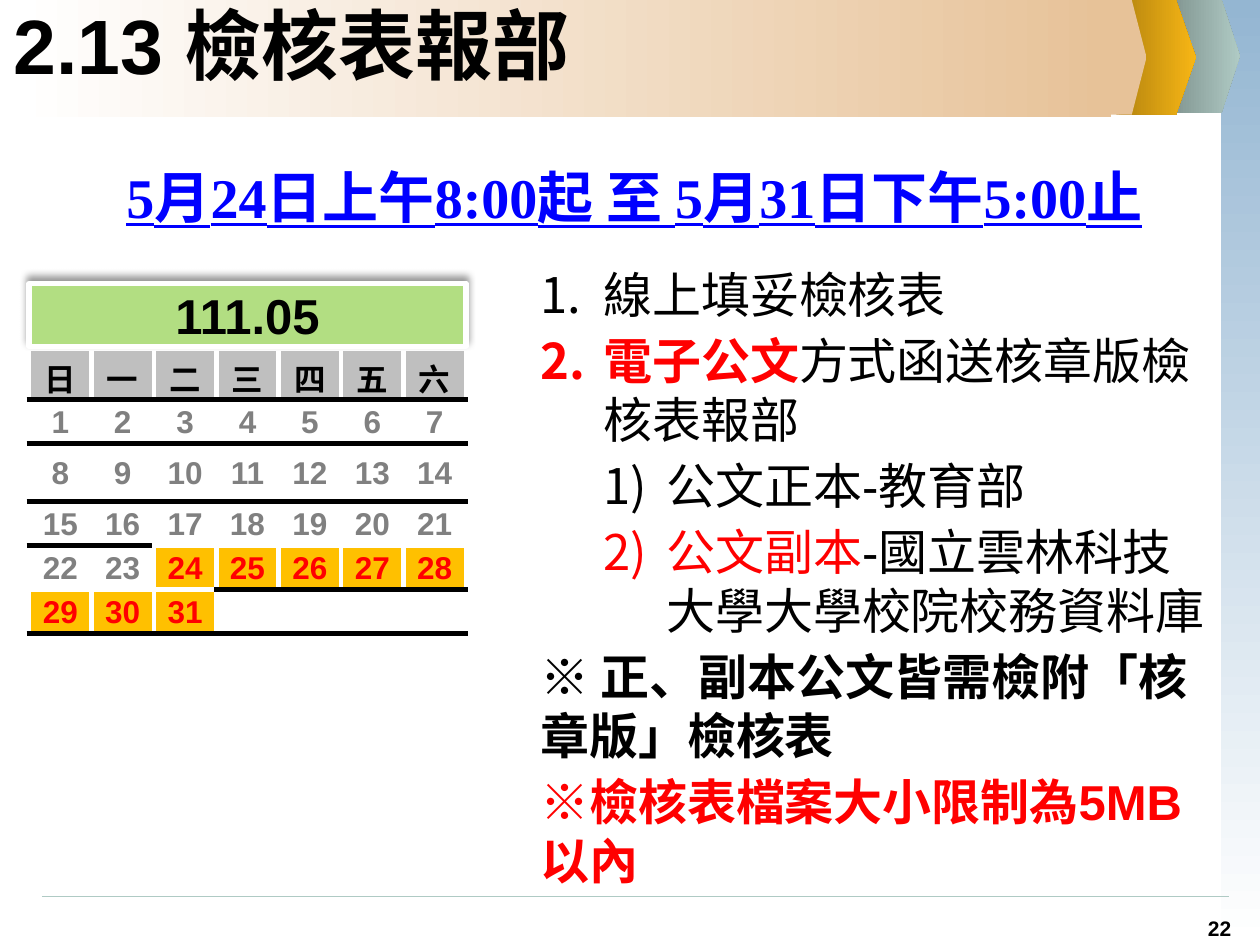
from dataclasses import dataclass
from typing import NamedTuple, Optional

from lxml import etree
from pptx import Presentation
from pptx.dml.color import RGBColor
from pptx.enum.shapes import MSO_CONNECTOR, MSO_SHAPE
from pptx.enum.text import MSO_ANCHOR, PP_ALIGN
from pptx.oxml.ns import qn
from pptx.util import Pt

RECT, PLATE = MSO_SHAPE.RECTANGLE, MSO_SHAPE.PENTAGON
STRAIGHT = MSO_CONNECTOR.STRAIGHT
LEFT, CENTER = PP_ALIGN.LEFT, PP_ALIGN.CENTER
TOP, MIDDLE = MSO_ANCHOR.TOP, MSO_ANCHOR.MIDDLE


@dataclass(frozen=True)
class Theme:
    black: str = "000000"
    white: str = "FFFFFF"
    red: str = "FF0000"
    link_blue: str = "0000FF"
    side_blue: str = "94B6D2"
    tan: str = "E7C298"
    sage: str = "AFCAC4"
    dark_sage: str = "7D908C"
    gold: str = "F7B615"
    dark_gold: str = "B1820F"
    month_green: str = "B2DE82"
    header_gray: str = "BFBFBF"
    day_gray: str = "808080"
    open_day: str = "FFC000"
    sans: str = "Arial"
    serif: str = "Times New Roman"
    cjk: str = "Noto Sans CJK SC"
    title_size: float = 44
    date_size: float = 32
    body_size: float = 28
    calendar_size: float = 18
    page_size: float = 12


THEME = Theme()


class Area(NamedTuple):
    left: float
    top: float
    width: float
    height: float

    def lengths(self):
        return [Pt(value) for value in self]


class Piece(NamedTuple):
    text: str
    color: str = THEME.black
    bold: bool = False


class Item(NamedTuple):
    pieces: list
    numbering: Optional[str] = None
    level: int = 0


class Band(NamedTuple):
    shape: MSO_SHAPE
    area: Area
    start: str
    end: str
    angle: float = 0


BANDS = [
    Band(PLATE, Area(666, -0.72, 42.5, 65.5), THEME.dark_sage, THEME.sage),
    Band(PLATE, Area(638, 0, 45.4, 65.5), THEME.dark_gold, THEME.gold),
    Band(RECT, Area(8.64, 0, 626.4, 67), THEME.white, THEME.tan),
    Band(PLATE, Area(621.4, 0, 33.8, 65.5), THEME.tan, THEME.tan),
]
SIDE_BAND = Band(RECT, Area(697.7, 0, 22.3, 540), THEME.side_blue, THEME.white, 270)

ITEMS = [
    Item([Piece("線上填妥檢核表")], "arabicPeriod"),
    Item([Piece("電子公文", THEME.red, True), Piece("方式函送核章版檢核表報部")], "arabicPeriod"),
    Item([Piece("公文正本-教育部")], "arabicParenR", 1),
    Item([Piece("公文副本", THEME.red), Piece("-國立雲林科技大學大學校院校務資料庫")],
         "arabicParenR", 1),
    Item([Piece("※ 正、副本公文皆需檢附「核章版」檢核表", bold=True)]),
    Item([Piece("※檢核表檔案大小限制為5MB以內", THEME.red, True)]),
]

WEEKDAYS = "日一二三四五六"
ROW_HEIGHTS = [24, 25.2, 33.1, 25.2, 25.2, 25.2]
LAST_DAY = 31
OPEN_DAYS = range(24, LAST_DAY + 1)


def add_run(para, piece: Piece, size: float, latin: str = THEME.sans):
    run = para.add_run()
    run.text = piece.text
    font = run.font
    font.name, font.size, font.bold = latin, Pt(size), piece.bold
    font.color.rgb = RGBColor.from_string(piece.color)
    east_asian = etree.Element(qn("a:ea"), typeface=THEME.cjk)
    font._element.find(qn("a:latin")).addnext(east_asian)
    return run


def add_text_box(slide, area: Area, anchor=TOP):
    frame = slide.shapes.add_textbox(*area.lengths()).text_frame
    frame.word_wrap = True
    frame.vertical_anchor = anchor
    return frame


def add_band(slide, band: Band) -> None:
    shape = slide.shapes.add_shape(band.shape, *band.area.lengths())
    shape.shadow.inherit = False
    shape.line.fill.background()
    if band.shape == PLATE:
        shape.adjustments[0] = 0.25
    shape.fill.gradient()
    shape.fill.gradient_angle = band.angle
    for stop, color in zip(shape.fill.gradient_stops, (band.start, band.end)):
        stop.color.rgb = RGBColor.from_string(color)


def add_footer(slide) -> None:
    rule = slide.shapes.add_connector(STRAIGHT, Pt(24), Pt(512.4), Pt(702), Pt(512.4))
    rule.line.color.rgb = RGBColor.from_string(THEME.sage)
    rule.line.width = Pt(0.75)
    etree.SubElement(rule._element.spPr, qn("a:effectLst"))


def add_items(slide) -> None:
    frame = add_text_box(slide, Area(301.7, 147.6, 397.4, 366.5))
    for index, item in enumerate(ITEMS):
        para = frame.paragraphs[0] if index == 0 else frame.add_paragraph()
        para.level = item.level
        para.space_before = para.space_after = Pt(2)
        para.line_spacing = Pt(33.7)
        if item.numbering:
            props = para._p.get_or_add_pPr()
            props.set("marL", str(Pt(36 * (item.level + 1))))
            props.set("indent", str(Pt(-36)))
            etree.SubElement(props, qn("a:buFont"), typeface=THEME.cjk)
            etree.SubElement(props, qn("a:buAutoNum"), type=item.numbering)
        for piece in item.pieces:
            add_run(para, piece, THEME.body_size)


def set_borders(cell, above: str, below: str) -> None:
    props = cell._tc.get_or_add_tcPr()
    sides = {"L": THEME.white, "R": THEME.white, "T": above, "B": below}
    for index, (side, color) in enumerate(sides.items()):
        line = etree.Element(qn(f"a:ln{side}"), w=str(Pt(3)))
        fill = etree.SubElement(line, qn("a:solidFill"))
        etree.SubElement(fill, qn("a:srgbClr"), val=color)
        props.insert(index, line)


def add_calendar(slide) -> None:
    """Each line between weeks is black unless an open day lies below it."""
    columns = len(WEEKDAYS)
    area = Area(16.6, 199.4, 249.8, sum(ROW_HEIGHTS))
    table = slide.shapes.add_table(len(ROW_HEIGHTS), columns, *area.lengths()).table
    table.first_row = table.horz_banding = False
    for row, height in zip(table.rows, ROW_HEIGHTS):
        row.height = Pt(height)

    def line_above(row: int, day: int) -> str:
        return THEME.white if row == 0 or day in OPEN_DAYS else THEME.black

    for row in range(len(ROW_HEIGHTS)):
        for column in range(columns):
            cell = table.cell(row, column)
            day = (row - 1) * columns + column + 1
            cell.vertical_anchor = MIDDLE
            text, color, fill = str(day), THEME.day_gray, None
            if row == 0:
                text, color, fill = WEEKDAYS[column], THEME.black, THEME.header_gray
            else:
                cell.margin_left = cell.margin_right = cell.margin_top = Pt(0.72)
                cell.margin_bottom = Pt(0)
                if day in OPEN_DAYS:
                    color, fill = THEME.red, THEME.open_day
            if fill:
                cell.fill.solid()
                cell.fill.fore_color.rgb = RGBColor.from_string(fill)
            else:
                cell.fill.background()
            set_borders(cell, line_above(row, day), line_above(row + 1, day + columns))
            para = cell.text_frame.paragraphs[0]
            para.alignment = CENTER
            if day <= LAST_DAY:
                add_run(para, Piece(text, color, True), THEME.calendar_size)


def add_month(slide) -> None:
    box = slide.shapes.add_shape(RECT, *Area(16.6, 162, 249.8, 36).lengths())
    box.fill.solid()
    box.fill.fore_color.rgb = RGBColor.from_string(THEME.month_green)
    box.line.color.rgb = RGBColor.from_string(THEME.white)
    box.line.width = Pt(3)
    box.shadow.inherit = False
    effects = box._element.spPr.find(qn("a:effectLst"))
    shadow = etree.SubElement(effects, qn("a:outerShdw"), blurRad=str(Pt(4)),
                              dist=str(Pt(3)), dir=str(270 * 60000), rotWithShape="0")
    color = etree.SubElement(shadow, qn("a:srgbClr"), val=THEME.black)
    etree.SubElement(color, qn("a:alpha"), val="40000")
    box.text_frame.vertical_anchor = MIDDLE
    para = box.text_frame.paragraphs[0]
    para.alignment = CENTER
    add_run(para, Piece("111.05", bold=True), THEME.body_size)


def main() -> None:
    deck = Presentation()
    deck.slide_width, deck.slide_height = Pt(720), Pt(540)
    slide = deck.slides.add_slide(deck.slide_layouts[6])
    add_band(slide, SIDE_BAND)
    add_footer(slide)
    for band in BANDS:
        add_band(slide, band)

    page = add_text_box(slide, Area(673.9, 519.8, 46.1, 20.2)).paragraphs[0]
    page.alignment = CENTER
    add_run(page, Piece("22", bold=True), THEME.page_size)

    title = add_text_box(slide, Area(0.72, 0.72, 558.7, 48.2), MIDDLE).paragraphs[0]
    title.alignment = LEFT
    add_run(title, Piece("2.13 檢核表報部", bold=True), THEME.title_size)

    add_items(slide)

    dates = add_text_box(slide, Area(18.7, 67.7, 687.6, 65.5)).paragraphs[0]
    dates.alignment = CENTER
    dates.line_spacing = Pt(60)
    period = Piece("5月24日上午8:00起 至 5月31日下午5:00止", THEME.link_blue, True)
    add_run(dates, period, THEME.date_size, THEME.serif).font.underline = True

    add_calendar(slide)
    add_month(slide)
    deck.save("out.pptx")


if __name__ == "__main__":
    main()
